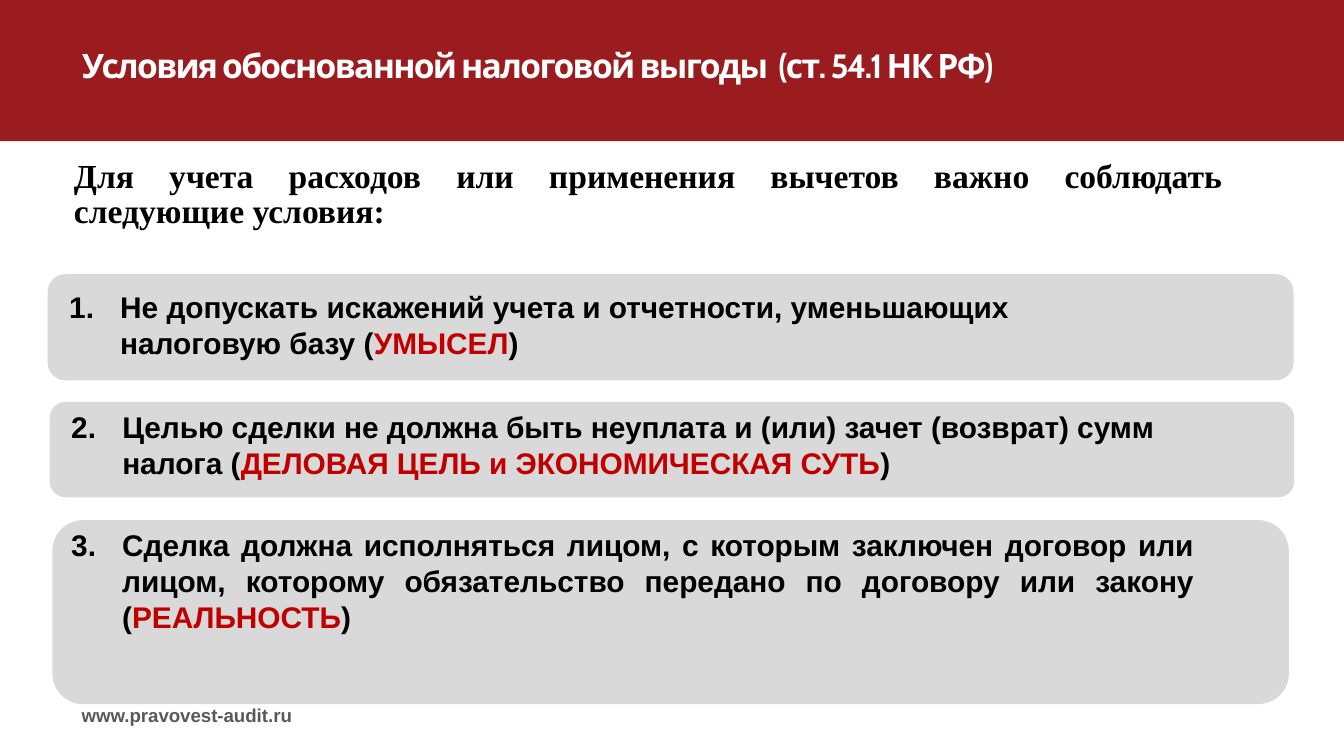
from lxml.etree import SubElement
from pptx import Presentation
from pptx.dml.color import RGBColor
from pptx.enum.shapes import MSO_SHAPE as Shape
from pptx.enum.text import MSO_ANCHOR as Anchor, PP_ALIGN as Align
from pptx.oxml.ns import qn
from pptx.util import Emu, Inches, Pt

CELL = Inches(0.1)  # the slide is 100 columns by 56.25 rows
COLS, ROWS = 100, 56.25
RED, GREY, WHITE, BLACK = "9A1C1F", "D9D9D9", "FFFFFF", "000000"
ACCENT, MUTED = "C00000", "595959"

RULES = [
    # card box, text offset and width, alignment, plain text, key words
    ((3.55, 20.4, 92.7, 7.9), (1.1, 0.6, 80), Align.LEFT,
     "Не допускать искажений учета и отчетности, уменьшающих налоговую базу (",
     "УМЫСЕЛ"),
    ((3.7, 29.9, 92.6, 7.1), (1.1, 0, 86.2), Align.LEFT,
     "Целью сделки не должна быть неуплата и (или) зачет (возврат) сумм налога (",
     "ДЕЛОВАЯ ЦЕЛЬ и ЭКОНОМИЧЕСКАЯ СУТЬ"),
    ((3.9, 38.7, 92, 13.7), (0.9, 0, 84.6), Align.JUSTIFY,
     "Сделка должна исполняться лицом, с которым заключен договор или лицом, "
     "которому обязательство передано по договору или закону (",
     "РЕАЛЬНОСТЬ"),
]


def color(code):
    return RGBColor.from_string(code)


def grid(*cells):
    return [Emu(round(n * CELL)) for n in cells]


def block(slide, kind, box, fill):
    shape = slide.shapes.add_shape(kind, *grid(*box))
    shape.shadow.inherit = False
    shape.fill.solid()
    shape.fill.fore_color.rgb = color(fill)
    shape.line.fill.background()
    return shape


def text(slide, box, inset=0.5, anchor=Anchor.TOP):
    """Add an empty text box and return its first paragraph."""
    frame = slide.shapes.add_textbox(*grid(*box)).text_frame
    frame.word_wrap = True
    frame.vertical_anchor = anchor
    frame.margin_left, frame.margin_right = grid(inset, inset)
    frame.margin_top, frame.margin_bottom = grid(0.5, 0.5)
    return frame.paragraphs[0]


def write(para, words, size, fill, face="Arial"):
    run = para.add_run()
    run.text = words
    font = run.font
    font.name, font.size, font.bold = face, Pt(size), True
    font.color.rgb = color(fill)
    return run


def number(para, start):
    props = para._p.get_or_add_pPr()
    indent = Inches(0.38)
    props.set("marL", str(indent))
    props.set("indent", str(-indent))
    mark = SubElement(props, qn("a:buAutoNum"), type="arabicPeriod")
    mark.set("startAt", str(start))


def header(slide, box):
    left, top, width, _ = box
    block(slide, Shape.RECTANGLE, box, RED)
    para = text(slide, (left + 5.1, top + 2.8, width - 7.9, 4.5), inset=1)
    para.line_spacing = Pt(22)
    run = write(para, "Условия обоснованной налоговой выгоды  (ст. 54.1 НК РФ)",
                18, WHITE, "Cabin")
    run._r.get_or_add_rPr().set("spc", "-90")


def lead(slide, box):
    para = text(slide, box)
    para.alignment = Align.JUSTIFY
    para.line_spacing = Pt(19)
    face = "Times New Roman"
    write(para, "Для учета расходов или применения вычетов важно соблюдать ",
          18, BLACK, face)
    para.add_line_break()
    write(para, "следующие условия:", 18, BLACK, face)


def card(slide, box, place, align, start, words, key):
    left, top, _, height = box
    dx, dy, width = place
    block(slide, Shape.ROUNDED_RECTANGLE, box, GREY)
    para = text(slide, (left + dx, top + dy, width, height - dy))
    number(para, start)
    para.alignment = align
    for part, fill in ((words, BLACK), (key, ACCENT), (")", BLACK)):
        write(para, part, 16, fill)


def footer(slide, box):
    para = text(slide, box, inset=1, anchor=Anchor.MIDDLE)
    write(para, "www.pravovest-audit.ru", 10, MUTED)


def main():
    deck = Presentation()
    deck.slide_width, deck.slide_height = grid(COLS, ROWS)
    slide = deck.slides.add_slide(deck.slide_layouts[6])
    footer(slide, (5.1, 51.7, 23.6, 3))
    header(slide, (0, 0, COLS, 10.5))
    lead(slide, (5, 11.4, 89.1, 7.3))
    for start, (box, place, align, words, key) in enumerate(RULES, 1):
        card(slide, box, place, align, start, words, key)
    deck.save("out.pptx")


if __name__ == "__main__":
    main()
